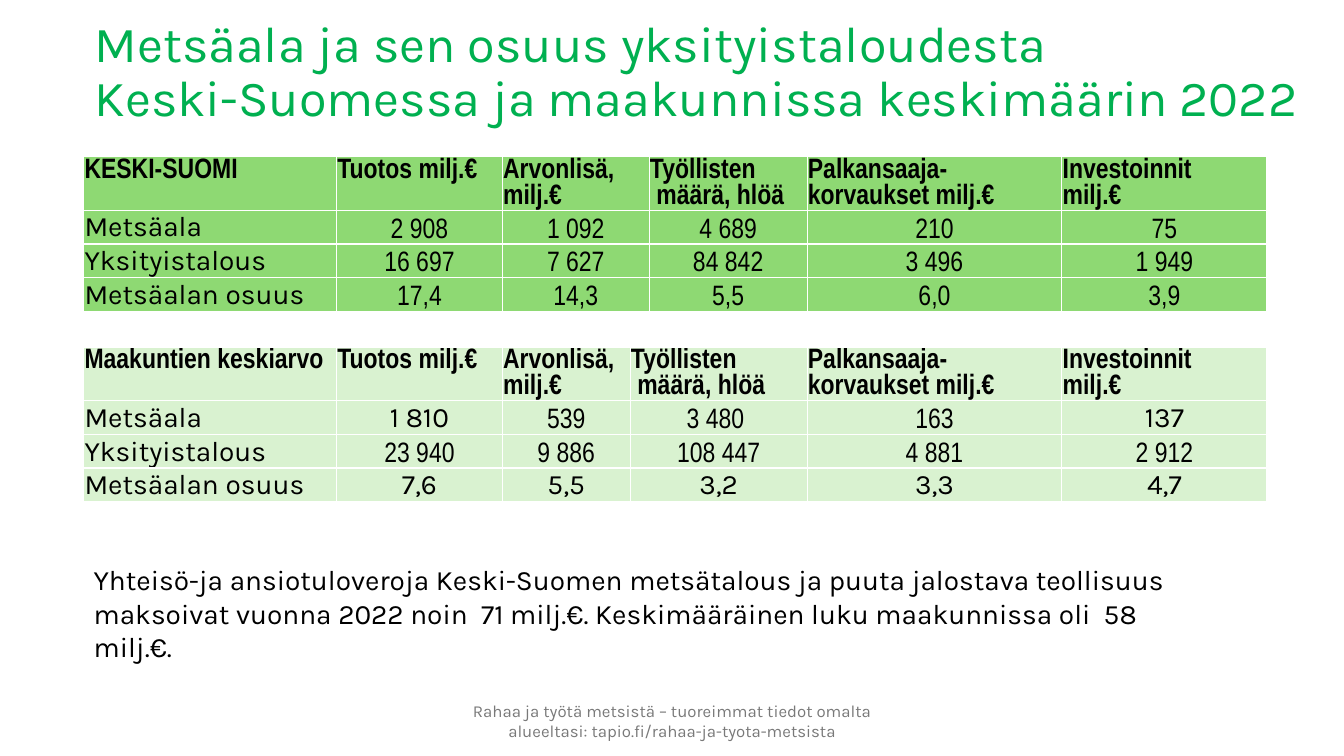
import pptx
import pptx.util
import pptx.dml.color
import pptx.enum.text
import pptx.oxml
import pptx.oxml.ns
from dataclasses import dataclass

Cm, Pt = pptx.util.Cm, pptx.util.Pt
RGB = pptx.dml.color.RGBColor.from_string
ALIGN = pptx.enum.text.PP_ALIGN
ANCHOR = pptx.enum.text.MSO_ANCHOR


@dataclass(frozen=True)
class Theme:
    body_font: str = "Karla"
    table_font: str = "Arial Narrow"
    title: str = "00B050"
    text: str = "000000"
    footer: str = "797979"
    border: str = "FFFFFF"
    region_fill: str = "8ED973"
    average_fill: str = "D9F2D0"
    title_size: int = 36
    body_size: int = 20
    footer_size: int = 12


T = Theme()

HEADINGS = ["Tuotos milj.€", "Arvonlisä, milj.€", "Työllisten\n määrä, hlöä",
            "Palkansaaja-korvaukset milj.€", "Investoinnit\nmilj.€"]
ROW_NAMES = ["Metsäala", "Yksityistalous", "Metsäalan osuus"]
REGION = [["2 908", "1 092", "4 689", "210", "75"],
          ["16 697", "7 627", "84 842", "3 496", "1 949"],
          ["17,4", "14,3", "5,5", "6,0", "3,9"]]
AVERAGE = [["1 810", "539", "3 480 ", "163", "137"],
           ["23 940", "9 886", "108 447", "4 881", "2 912"],
           ["7,6", "5,5", "3,2", "3,3", "4,7"]]
# Figures of the average table set in the body font, as (row, column)
AVERAGE_BODY_FONT = {(1, 1), (1, 5)} | {(3, c) for c in range(1, 6)}


def style(p, size, color, font=T.body_font, align=ALIGN.LEFT, bold=False):
    p.alignment = align
    p.font.size = Pt(size)
    p.font.name = font
    p.font.bold = bold
    p.font.color.rgb = RGB(color)


def add_title(s, text, x, y, w, h):
    sp = s.shapes.title
    sp.left, sp.top, sp.width, sp.height = Cm(x), Cm(y), Cm(w), Cm(h)
    tf = sp.text_frame
    tf.text = text
    tf.auto_size = pptx.enum.text.MSO_AUTO_SIZE.NONE
    tf.vertical_anchor = ANCHOR.MIDDLE
    p = tf.paragraphs[0]
    p.line_spacing = 0.9
    style(p, T.title_size, T.title)


def add_text(s, text, x, y, w, h, size, color, align=ALIGN.LEFT, anchor=ANCHOR.TOP):
    tf = s.shapes.add_textbox(Cm(x), Cm(y), Cm(w), Cm(h)).text_frame
    tf.word_wrap = True
    tf.vertical_anchor = anchor
    tf.text = text
    style(tf.paragraphs[0], size, color, align=align)


def set_borders(cell):
    tcPr = cell._tc.get_or_add_tcPr()
    for i, side in enumerate(("lnL", "lnR", "lnT", "lnB")):
        tcPr.insert(i, pptx.oxml.parse_xml(
            f'<a:{side} {pptx.oxml.ns.nsdecls("a")} w="{Pt(1)}"><a:solidFill>'
            f'<a:srgbClr val="{T.border}"/></a:solidFill></a:{side}>'))


def add_figures(s, name, figures, fill, x, y, widths, body_font_cells=frozenset()):
    heights = [1.33] + [0.84] * len(figures)
    rows = [[name] + HEADINGS] + [[n] + f for n, f in zip(ROW_NAMES, figures)]
    table = s.shapes.add_table(len(rows), len(widths), Cm(x), Cm(y),
                               Cm(sum(widths)), Cm(sum(heights))).table
    table.first_row = table.horz_banding = False
    for col, width in zip(table.columns, widths):
        col.width = Cm(width)
    for r, (row, height) in enumerate(zip(rows, heights)):
        table.rows[r].height = Cm(height)
        for c, text in enumerate(row):
            cell = table.cell(r, c)
            cell.text = text
            cell.margin_left = cell.margin_right = cell.margin_top = Cm(0.02)
            cell.margin_bottom = 0
            cell.vertical_anchor = ANCHOR.BOTTOM if r else ANCHOR.TOP
            cell.fill.solid()
            cell.fill.fore_color.rgb = RGB(fill)
            set_borders(cell)
            in_body_font = (r and c == 0) or (r, c) in body_font_cells
            for p in cell.text_frame.paragraphs:
                style(p, T.body_size, T.text,
                      font=T.body_font if in_body_font else T.table_font,
                      align=ALIGN.CENTER if r and c else ALIGN.LEFT,
                      bold=r == 0)


def main():
    prs = pptx.Presentation()
    prs.slide_width, prs.slide_height = Cm(33.87), Cm(19.05)
    s = prs.slides.add_slide(prs.slide_layouts[5])

    # Title
    add_title(s, "Metsäala ja sen osuus yksityistaloudesta \v"
              "Keski-Suomessa ja maakunnissa keskimäärin 2022", 2.13, 0, 30.96, 3.68)

    # Region and average tables
    left = 2.11
    add_figures(s, "KESKI-SUOMI", REGION, T.region_fill, left, 3.95,
                [6.37, 4.18, 3.7, 3.98, 6.42, 5.17])
    add_figures(s, "Maakuntien keskiarvo", AVERAGE, T.average_fill, left, 8.75,
                [6.37, 4.18, 3.22, 4.46, 6.42, 5.17], AVERAGE_BODY_FONT)

    # Tax note
    add_text(s, "Yhteisö-ja ansiotuloveroja Keski-Suomen metsätalous ja puuta jalostava "
             "teollisuus maksoivat vuonna 2022 noin  71 milj.€. Keskimääräinen luku "
             "maakunnissa oli  58 milj.€.", left, 14.05, 27.69, 1.96, T.body_size, T.text)

    # Footer
    add_text(s, "Rahaa ja työtä metsistä – tuoreimmat tiedot omalta alueeltasi: "
             "tapio.fi/rahaa-ja-tyota-metsista", 10.97, 17.65, 11.94, 1.02,
             T.footer_size, T.footer, ALIGN.CENTER, ANCHOR.MIDDLE)

    prs.save("out.pptx")


if __name__ == "__main__":
    main()
